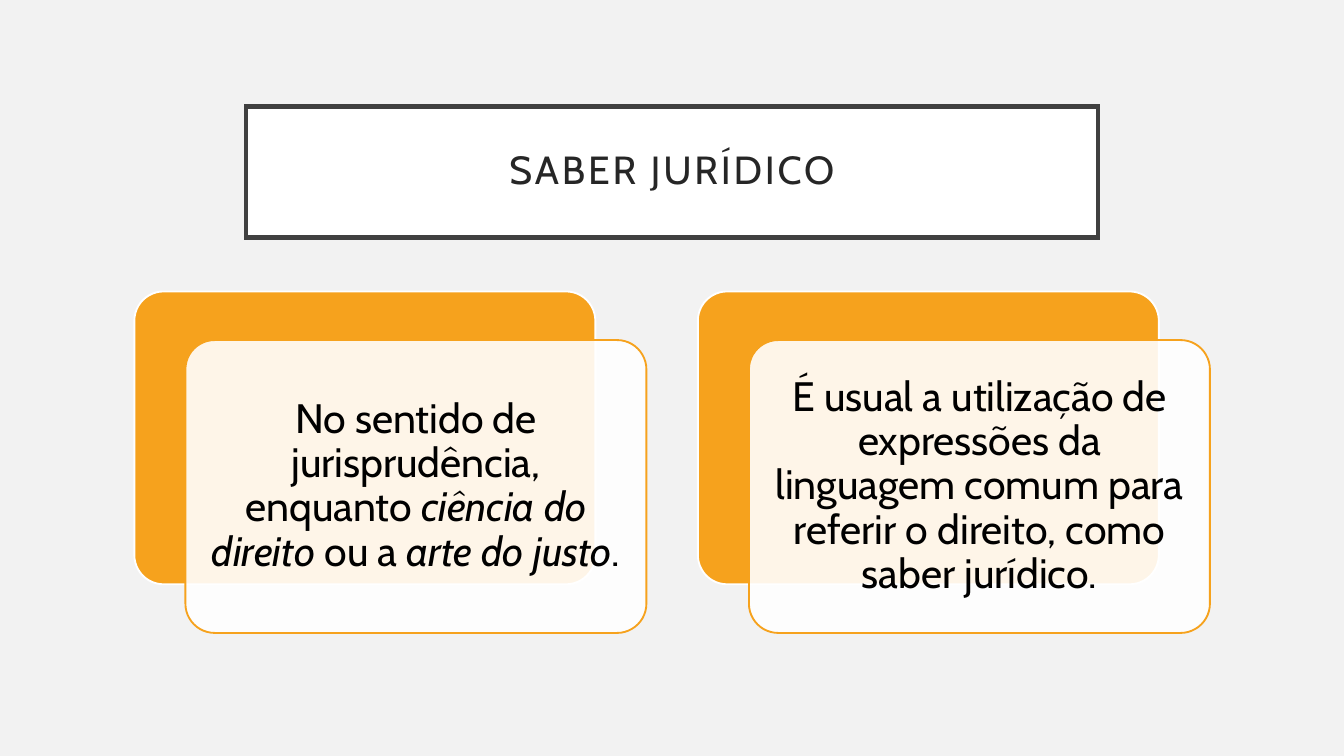
import pptx
import pptx.dml.color
import pptx.enum.shapes
import pptx.enum.text
import pptx.oxml
import pptx.oxml.ns
import pptx.util

WIDTH = 10
HEIGHT = WIDTH * 9 / 16
COLS = ROWS = 100
SHAPE = pptx.enum.shapes.MSO_SHAPE
ORANGE, WHITE = "F6A21D", "FFFFFF"
CARD_W, CARD_H = 34.3, 38.74
CARD_LEFT, CARD_TOP, CARD_STEP = 10, 38.55, 41.93
SHIFT_X, SHIFT_Y = 3.8, 6.43
PAD_X, PAD_Y = 0.64, 1.1
TITLE_FONT = {"name": "Cabin", "size": pptx.util.Pt(21)}
BODY_FONT = {"name": "Cabin", "size": pptx.util.Pt(22)}
CARDS = [
    [("No sentido de jurisprudência, enquanto ", False),
     ("ciência do direito ", True),
     ("ou a ", False),
     ("arte do justo", True),
     (".", False)],
    [("É usual a utilização de expressões da linguagem comum para "
      "referir o direito, como saber jurídico.", False)],
]


def rgb(value):
    """Return the colour of a hex string."""
    return pptx.dml.color.RGBColor.from_string(value)


def box(col, row, cols, rows):
    """Turn grid columns and rows into left, top, width and height."""
    x, y = WIDTH / COLS, HEIGHT / ROWS
    return [pptx.util.Inches(v) for v in (col * x, row * y, cols * x, rows * y)]


def apply(target, values):
    """Set each format value on the target."""
    for name, value in values.items():
        setattr(target, name, value)


def add_xml(parent, tag, attributes):
    """Append a drawing element with the given attributes."""
    names = pptx.oxml.ns.nsdecls("a")
    parent.append(pptx.oxml.parse_xml(f"<a:{tag} {names} {attributes}/>"))


def add_panel(s, kind, place, fill, line, weight, alpha=None):
    """Add a filled and outlined shape, see-through when alpha is given."""
    sp = s.shapes.add_shape(kind, *box(*place))
    sp.shadow.inherit = False
    sp.fill.solid()
    sp.fill.fore_color.rgb = rgb(fill)
    sp.line.color.rgb = rgb(line)
    sp.line.width = pptx.util.Pt(weight)
    add_xml(sp.line._get_or_add_ln(), "miter", 'lim="800000"')
    if kind == SHAPE.ROUNDED_RECTANGLE:
        sp.adjustments[0] = 0.1
    if alpha is not None:
        clr = sp.fill._xPr.find(".//" + pptx.oxml.ns.qn("a:srgbClr"))
        add_xml(clr, "alpha", f'val="{alpha * 1000}"')
    return sp


def write(sp, runs, font, color, inset, spacing=None):
    """Write centred runs of text and italic flag into a shape."""
    tf = sp.text_frame
    apply(tf, {"word_wrap": True,
               "vertical_anchor": pptx.enum.text.MSO_ANCHOR.MIDDLE})
    apply(tf, {f"margin_{side}": pptx.util.Inches(inset)
               for side in ("left", "top", "right", "bottom")})
    p = tf.paragraphs[0]
    apply(p, {"alignment": pptx.enum.text.PP_ALIGN.CENTER, "line_spacing": 0.9})
    for text, italic in runs:
        r = p.add_run()
        r.text = text
        apply(r.font, {**font, "italic": italic})
        r.font.color.rgb = rgb(color)
        if spacing:
            r.font._element.set("spc", str(int(spacing * 100)))


def add_card(s, col, row, runs):
    """Add an orange card, the pale card over it and its text."""
    front_col, front_row = col + SHIFT_X, row + SHIFT_Y
    kind = SHAPE.ROUNDED_RECTANGLE
    add_panel(s, kind, (col, row, CARD_W, CARD_H), ORANGE, WHITE, 1)
    add_panel(s, kind, (front_col, front_row, CARD_W, CARD_H),
              WHITE, ORANGE, 1, alpha=90)
    tb = s.shapes.add_textbox(*box(front_col + PAD_X, front_row + PAD_Y,
                                   CARD_W - 2 * PAD_X, CARD_H - 2 * PAD_Y))
    write(tb, runs, BODY_FONT, "000000", 0.09)


def main():
    """Build the slide and save it."""
    prs = pptx.Presentation()
    apply(prs, {"slide_width": pptx.util.Inches(WIDTH),
                "slide_height": pptx.util.Inches(HEIGHT)})
    s = prs.slides.add_slide(prs.slide_layouts[6])
    s.background.fill.solid()
    s.background.fill.fore_color.rgb = rgb("F2F2F2")
    title = add_panel(s, SHAPE.RECTANGLE, (18.3, 14.08, 63.4, 17.32),
                      WHITE, "404040", 2.5)
    write(title, [("SABER JURÍDICO", False)], TITLE_FONT, "262626", 0.2, 1.5)
    for i, runs in enumerate(CARDS):
        add_card(s, CARD_LEFT + i * CARD_STEP, CARD_TOP, runs)
    prs.save("out.pptx")


if __name__ == "__main__":
    main()
